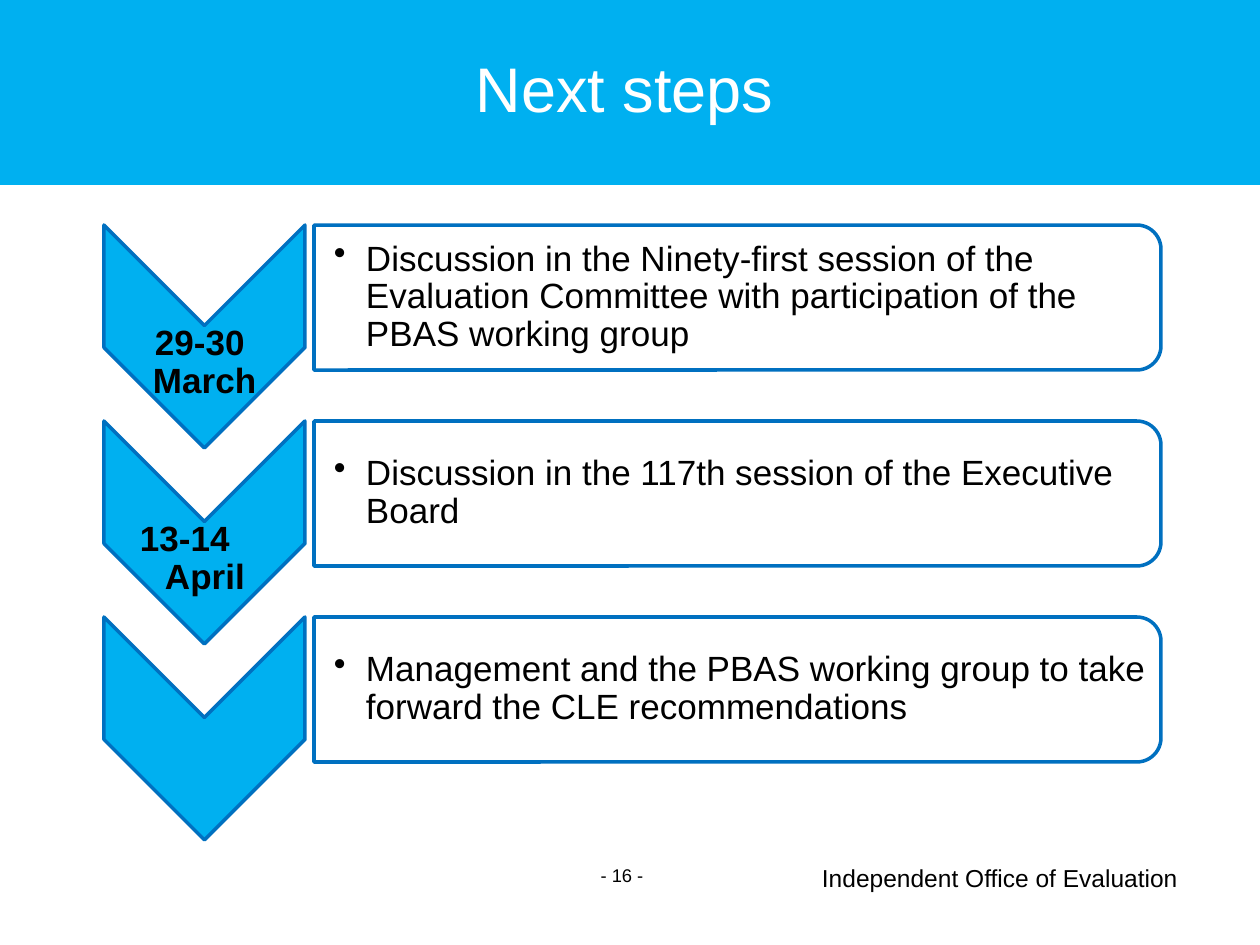
from lxml import etree
from pptx import Presentation
from pptx.dml.color import RGBColor
from pptx.enum.shapes import MSO_SHAPE
from pptx.enum.text import MSO_ANCHOR, PP_ALIGN
from pptx.oxml.ns import qn
from pptx.util import Pt

PX = 914400 / 126
BAR, CHEVRON, CARD = MSO_SHAPE.RECTANGLE, MSO_SHAPE.CHEVRON, MSO_SHAPE.ROUND_2_SAME_RECTANGLE
TOP, MIDDLE = MSO_ANCHOR.TOP, MSO_ANCHOR.MIDDLE
LEFT, CENTER, RIGHT = PP_ALIGN.LEFT, PP_ALIGN.CENTER, PP_ALIGN.RIGHT
BLUE, EDGE, WHITE, BLACK = "00B0F0", "0070C0", "FFFFFF", "000000"
PITCH = 196
# date, left margin of its last line, shift of its first line, step
STEPS = [
    ("29-30\vMarch", 48, 2,
     "Discussion in the Ninety-first session of the Evaluation Committee "
     "with participation of the PBAS working group"),
    ("13-14\vApril", 60, -25,
     "Discussion in the 117th session of the Executive Board"),
    (None, 0, 0,
     "Management and the PBAS working group to take forward the CLE recommendations"),
]


def emu(px):
    return round(px * PX)


def color(code):
    return RGBColor.from_string(code)


class Deck:
    font = "Arial"

    def __init__(self):
        self.prs = Presentation()
        self.prs.slide_width, self.prs.slide_height = emu(1260), emu(945)
        self.slide = self.prs.slides.add_slide(self.prs.slide_layouts[6])

    def shape(self, kind, box, fill, line=None, turn=0, alpha=None):
        """Draw a preset shape; alpha is its opacity in percent."""
        item = self.slide.shapes.add_shape(kind, *map(emu, box))
        item.shadow.inherit = False
        item.rotation = turn
        item.fill.solid()
        item.fill.fore_color.rgb = color(fill)
        if alpha:
            tint = item.fill._xPr.find(".//" + qn("a:srgbClr"))
            etree.SubElement(tint, qn("a:alpha"), val=str(alpha * 1000))
        if line:
            item.line.color.rgb = color(line)
            item.line.width = Pt(2)
        else:
            item.line.fill.background()

    def text(self, words, box, size=20, ink=BLACK, bold=False, align=LEFT,
             anchor=MIDDLE, pad=(1, 1, 1, 1), wrap=True, space=None,
             margin=0, indent=0, bullet=None):
        frame = self.slide.shapes.add_textbox(*map(emu, box)).text_frame
        frame.word_wrap = wrap
        frame.vertical_anchor = anchor
        (frame.margin_left, frame.margin_top,
         frame.margin_right, frame.margin_bottom) = map(emu, pad)
        para = frame.paragraphs[0]
        para.text = words
        para.alignment = align
        para.line_spacing = space
        props = para._p.get_or_add_pPr()
        props.set("marL", str(emu(margin)))
        props.set("indent", str(emu(indent)))
        if bullet:
            etree.SubElement(props, qn("a:buChar"), char=bullet)
        font = para.font
        font.name, font.size, font.bold = self.font, Pt(size), bold
        font.color.rgb = color(ink)
        for run in para.runs:
            run.font.name, run.font.size, run.font.bold = self.font, Pt(size), bold
            run.font.color.rgb = color(ink)

    def step(self, row, date, margin, indent, words):
        """Draw one chevron with its date and the card beside it."""
        drop = row * PITCH
        self.shape(CHEVRON, (93, 236 + drop, 223, 201), BLUE, EDGE, turn=90)
        if date:
            self.text(date, (104, 325 + drop, 201, 76), bold=True,
                      space=0.9, margin=margin, indent=indent)
        self.shape(CARD, (665, drop - 126, 145, 847), WHITE, EDGE, turn=90, alpha=90)
        self.text(words, (314, 232 + drop, 840, 131), pad=(20, 1, 1, 1),
                  space=0.9, margin=32, indent=-32, bullet="•")


def main():
    deck = Deck()
    deck.shape(BAR, (0, 0, 1260, 185), BLUE)
    deck.text("Independent Office of Evaluation", (808, 857, 383, 43), size=14,
              align=RIGHT, anchor=TOP, pad=(13, 6, 13, 6), wrap=False)
    deck.text("Next steps", (64, 28, 1121, 118), size=36, ink=WHITE,
              align=CENTER, pad=(0, 0, 0, 0))
    deck.text("- 16 -", (475, 850, 294, 50), size=10.5, align=CENTER)
    for row, step in enumerate(STEPS):
        deck.step(row, *step)
    deck.prs.save("out.pptx")


if __name__ == "__main__":
    main()
